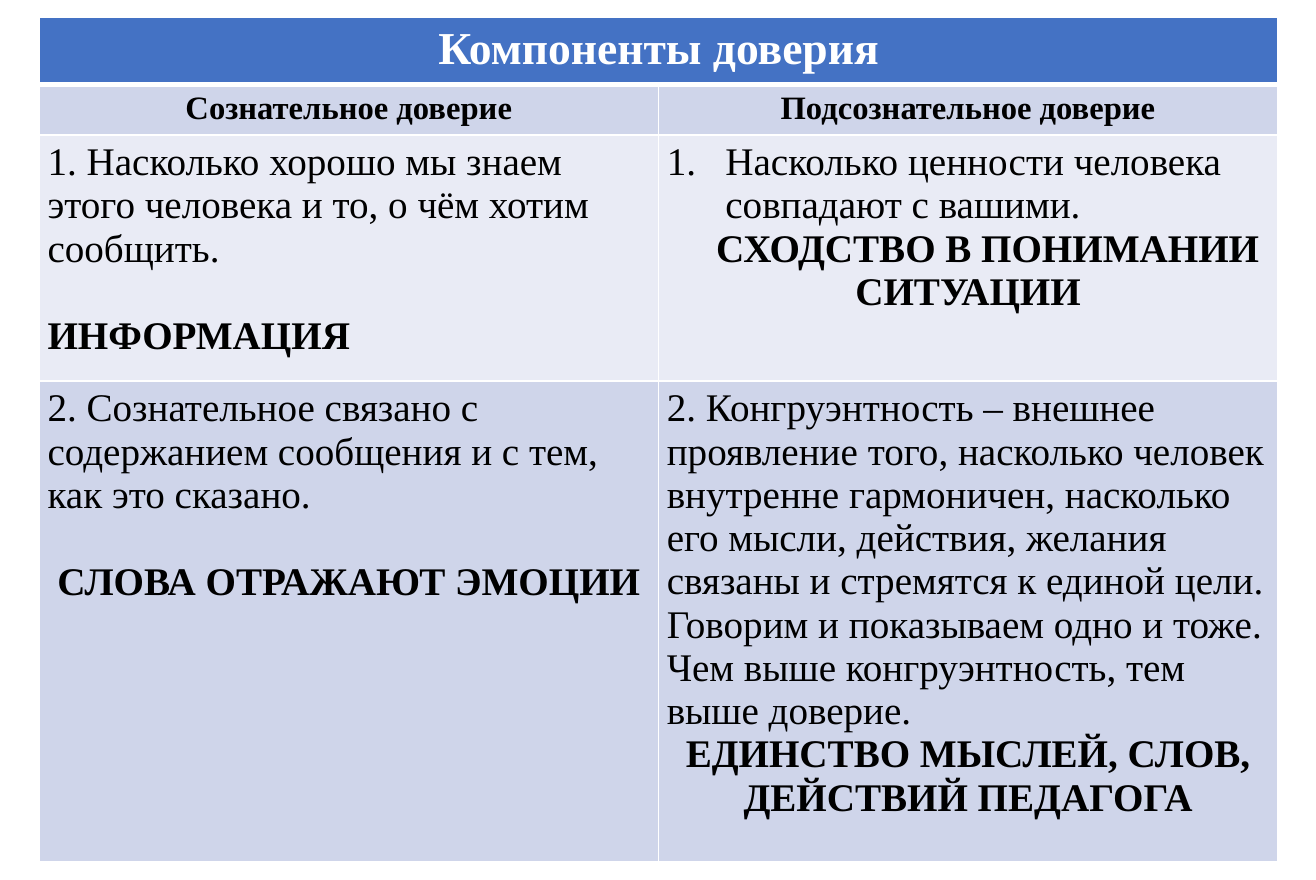
from lxml import etree
from pptx import Presentation
from pptx.dml.color import RGBColor
from pptx.enum.text import PP_ALIGN
from pptx.oxml.ns import qn
from pptx.util import Cm, Pt

LEFT, CENTER = PP_ALIGN.LEFT, PP_ALIGN.CENTER
FONT = "Times New Roman"
COLORS = {
    "header": "4472C4",
    "band_dark": "CFD5EA",
    "band_light": "E9EBF5",
    "white": "FFFFFF",
    "black": "000000",
}
COLUMN_WIDTHS = [13.41, 13.41]
ROW_HEIGHTS = [1.45, 1.09, 5.33, 10.41]
ROW_FILLS = ["header", "band_dark", "band_light", "band_dark"]
ROW_SIZES = [28, 20, 24, 24]
LINE_GAP = 27


def add_borders(cell, bottom_width):
    properties = cell._tc.get_or_add_tcPr()
    for side, width in (("L", 1), ("R", 1), ("T", 1), ("B", bottom_width)):
        line = etree.SubElement(properties, qn(f"a:ln{side}"), w=str(Pt(width)))
        fill = etree.SubElement(line, qn("a:solidFill"))
        etree.SubElement(fill, qn("a:srgbClr"), val=COLORS["white"])


def item(text, bold=False, align=LEFT, before=0, margin=0, indent=0, numbered=False):
    return text, bold, align, before, margin, indent, numbered


ROWS = [
    [[item("Компоненты доверия", True, CENTER)], []],
    [
        [item("Сознательное доверие", True, CENTER)],
        [item("Подсознательное доверие", True, CENTER)],
    ],
    [
        [
            item("1. Насколько хорошо мы знаем этого человека и то, о чём хотим сообщить."),
            item("ИНФОРМАЦИЯ", True, before=LINE_GAP),
        ],
        [
            item("Насколько ценности человека совпадают с вашими.",
                 margin=1.27, indent=-1.27, numbered=True),
            item("СХОДСТВО В ПОНИМАНИИ СИТУАЦИИ", True, CENTER, indent=0.85),
        ],
    ],
    [
        [
            item("2. Сознательное связано с содержанием сообщения и с тем, как это сказано."),
            item("СЛОВА ОТРАЖАЮТ ЭМОЦИИ", True, before=LINE_GAP, indent=0.21),
        ],
        [
            item("2. Конгруэнтность – внешнее проявление того, насколько человек внутренне "
                 "гармоничен, насколько его мысли, действия, желания связаны и стремятся к "
                 "единой цели. Говорим и показываем одно и тоже. Чем выше конгруэнтность, "
                 "тем выше доверие."),
            item("ЕДИНСТВО МЫСЛЕЙ, СЛОВ, ДЕЙСТВИЙ ПЕДАГОГА", True, CENTER),
        ],
    ],
]

presentation = Presentation()
presentation.slide_width = Cm(28.5)
presentation.slide_height = Cm(19.05)
slide = presentation.slides.add_slide(presentation.slide_layouts[6])

table = slide.shapes.add_table(
    len(ROW_HEIGHTS), len(COLUMN_WIDTHS), Cm(0.85), Cm(0.38),
    Cm(sum(COLUMN_WIDTHS)), Cm(sum(ROW_HEIGHTS)),
).table
for column, width in zip(table.columns, COLUMN_WIDTHS):
    column.width = Cm(width)
for row, height in zip(table.rows, ROW_HEIGHTS):
    row.height = Cm(height)
table.cell(0, 0).merge(table.cell(0, 1))

for row_index, row_items in enumerate(ROWS):
    is_title = row_index == 0
    for column_index, cell_items in enumerate(row_items):
        cell = table.cell(row_index, column_index)
        add_borders(cell, 3 if is_title else 1)
        cell.fill.solid()
        cell.fill.fore_color.rgb = RGBColor.from_string(COLORS[ROW_FILLS[row_index]])
        cell.margin_left = cell.margin_right = Cm(0.18)
        cell.margin_top = cell.margin_bottom = Cm(0.13)
        cell.text_frame.text = "\n".join(entry[0] for entry in cell_items)
        for paragraph, entry in zip(cell.text_frame.paragraphs, cell_items):
            text, bold, align, before, margin, indent, numbered = entry
            paragraph.alignment = align
            if before:
                paragraph.space_before = Pt(before)
            properties = paragraph._p.get_or_add_pPr()
            properties.set("marL", str(Cm(margin)))
            properties.set("indent", str(Cm(indent)))
            if numbered:
                etree.SubElement(properties, qn("a:buFont"), typeface="+mj-lt")
                etree.SubElement(properties, qn("a:buAutoNum"), type="arabicPeriod")
            for run in paragraph.runs:
                run.font.name = FONT
                run.font.size = Pt(ROW_SIZES[row_index])
                run.font.bold = bold
                run.font.color.rgb = RGBColor.from_string(
                    COLORS["white" if is_title else "black"])

presentation.save("out.pptx")
